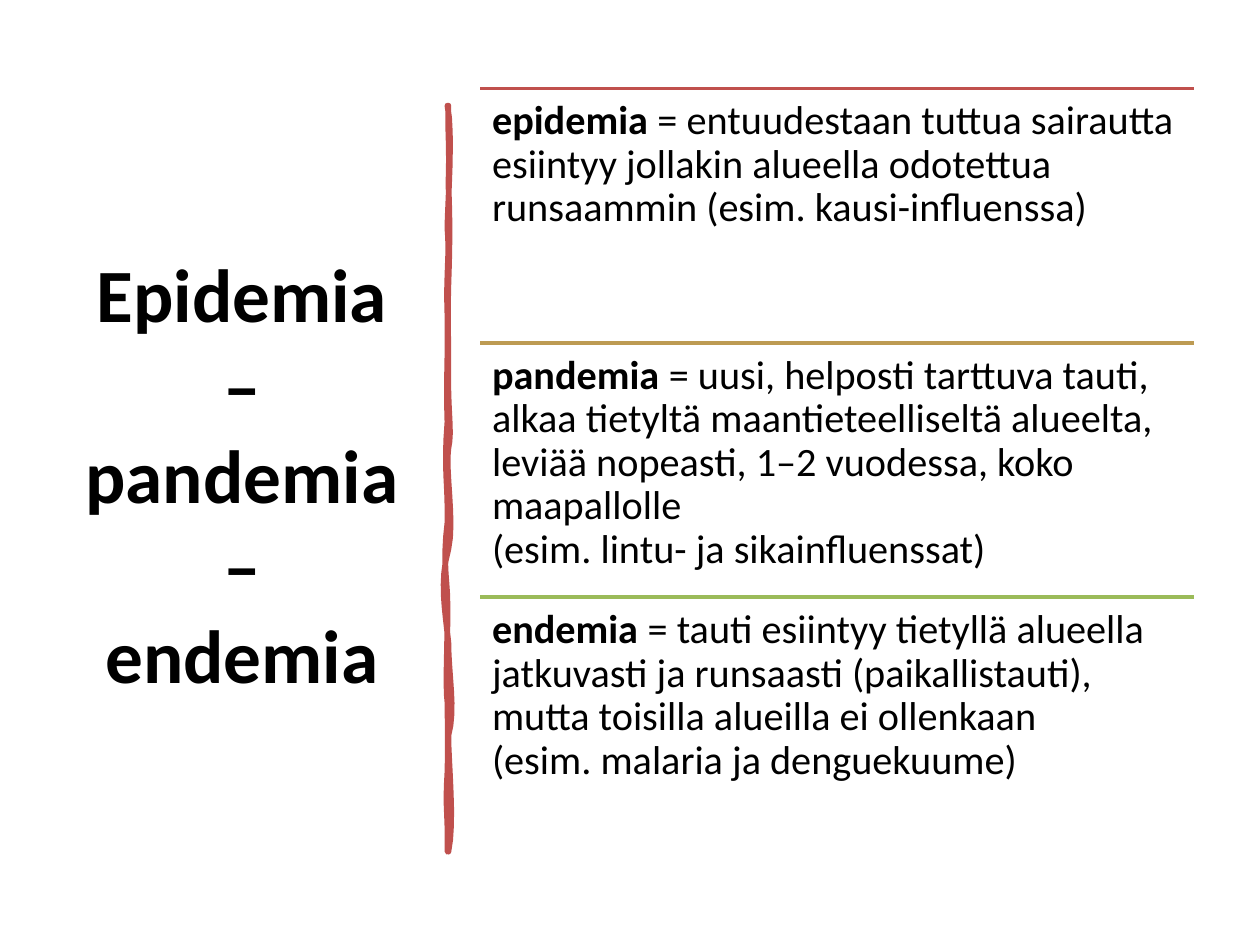
from dataclasses import dataclass

from lxml.etree import SubElement
from pptx import Presentation
from pptx.dml.color import RGBColor
from pptx.enum.shapes import MSO_CONNECTOR
from pptx.enum.text import MSO_ANCHOR, MSO_AUTO_SIZE, PP_ALIGN
from pptx.oxml.ns import qn
from pptx.util import Cm, Pt


@dataclass(frozen=True)
class Theme:
    font: str = "Calibri"
    ink: str = "000000"
    red: str = "C0504D"
    gold: str = "BD9B53"
    green: str = "9BBB59"
    title: float = 43
    body: float = 23
    rule: float = 2
    brush: float = 3.25


# Brush stroke in cm: start point, then two controls and an end per curve.
START = (9.04, 2.13)
CURVES = [
    # right edge, downwards
    (9.02, 2.62, 9.07, 2.95, 9.04, 3.71), (9.07, 4.42, 9.07, 4.85, 9.04, 5.74),
    (9.02, 6.55, 9.04, 6.65, 9.04, 7.47), (9.02, 8.26, 9.12, 8.69, 9.04, 9.04),
    (8.97, 9.45, 9.17, 10.52, 9.04, 11.07), (8.86, 11.73, 8.97, 12.27, 9.04, 12.95),
    (9.04, 13.59, 9.19, 14.3, 9.04, 14.83), (9.04, 15.39, 9.17, 16.59, 9.04, 17.17),
    (9.04, 17.15, 9.02, 17.17, 9.02, 17.17),
    # left edge, upwards
    (9.04, 16.38, 8.97, 16.36, 9.02, 15.57), (9.04, 14.81, 9.02, 14.48, 9.02, 14.15),
    (8.97, 13.87, 9.04, 12.55, 9.02, 12.12), (9.02, 11.73, 8.92, 11.35, 9.02, 10.54),
    (9.04, 9.8, 8.94, 9.47, 9.02, 8.51), (8.99, 7.62, 9.04, 7.09, 9.02, 6.35),
    (8.99, 5.49, 9.07, 5.16, 9.02, 4.6), (9.02, 4.19, 9.14, 2.64, 9.02, 2.13),
]


def trace(start, curves, steps=8):
    """Return points along a chain of cubic curves."""
    points = []
    for ax, ay, bx, by, cx, cy in curves:
        x, y = start
        for i in range(1, steps + 1):
            t = i / steps
            u = 1 - t
            w = (u**3, 3 * u * u * t, 3 * u * t * t, t**3)
            points.append((
                Cm(w[0] * x + w[1] * ax + w[2] * bx + w[3] * cx),
                Cm(w[0] * y + w[1] * ay + w[2] * by + w[3] * cy),
            ))
        start = (cx, cy)
    return points


def write(par, text, *, font, size, color, bold=False):
    """Add text to a paragraph; a newline becomes a line break."""
    for i, part in enumerate(text.split("\n")):
        if i:
            par.add_line_break()
        run = par.add_run()
        run.text = part
        run.font.name = font
        run.font.size = Pt(size)
        run.font.bold = bold
        run.font.color.rgb = RGBColor.from_string(color)


class Deck:
    """Holds the theme and the current slide."""

    def __init__(self, theme):
        self.theme = theme
        self.file = Presentation()
        self.file.slide_width, self.file.slide_height = Cm(25.4), Cm(19.05)
        self.slide = self.file.slides.add_slide(self.file.slide_layouts[5])
        self.look = {"font": theme.font, "color": theme.ink}

    def title(self, text, x, y, w, h):
        box = self.slide.shapes.title
        box.left, box.top, box.width, box.height = Cm(x), Cm(y), Cm(w), Cm(h)
        frame = box.text_frame
        frame.word_wrap = True
        frame.auto_size = MSO_AUTO_SIZE.NONE
        frame.vertical_anchor = MSO_ANCHOR.MIDDLE
        par = frame.paragraphs[0]
        par.alignment = PP_ALIGN.CENTER
        write(par, text, size=self.theme.title, bold=True, **self.look)

    def brush(self, color):
        points = trace(START, CURVES)
        outline = self.slide.shapes.build_freeform(Cm(START[0]), Cm(START[1]))
        outline.add_line_segments(points, close=True)
        shape = outline.convert_to_shape()
        shape.shadow.inherit = False
        shape.fill.solid()
        shape.fill.fore_color.rgb = RGBColor.from_string(color)
        shape.line.color.rgb = RGBColor.from_string(color)
        shape.line.width = Pt(self.theme.brush)

    def rule(self, x, y, w, color):
        line = self.slide.shapes.add_connector(
            MSO_CONNECTOR.STRAIGHT, Cm(x), Cm(y), Cm(x + w), Cm(y))
        line.line.color.rgb = RGBColor.from_string(color)
        line.line.width = Pt(self.theme.rule)
        SubElement(line._element.spPr, qn("a:effectLst"))

    def entry(self, term, text, x, y, w, h):
        box = self.slide.shapes.add_textbox(Cm(x), Cm(y), Cm(w), Cm(h))
        frame = box.text_frame
        frame.word_wrap = True
        frame.margin_left = frame.margin_right = Cm(0.24)
        frame.margin_top = frame.margin_bottom = Cm(0.24)
        par = frame.paragraphs[0]
        par.line_spacing = 0.9
        write(par, term, size=self.theme.body, bold=True, **self.look)
        write(par, text, size=self.theme.body, **self.look)


def main():
    theme = Theme()
    deck = Deck(theme)
    deck.title("Epidemia – pandemia – endemia", 1.32, 1.78, 7.11, 15.52)
    deck.brush(theme.red)

    terms = [
        ("epidemia", theme.red,
         " = entuudestaan tuttua sairautta esiintyy jollakin alueella "
         "odotettua runsaammin (esim. kausi-influenssa)"),
        ("pandemia", theme.gold,
         " = uusi, helposti tarttuva tauti, alkaa tietyltä maantieteelliseltä "
         "alueelta, leviää nopeasti, 1–2 vuodessa, koko maapallolle \n"
         "(esim. lintu- ja sikainfluenssat)"),
        ("endemia", theme.green,
         " = tauti esiintyy tietyllä alueella jatkuvasti ja runsaasti "
         "(paikallistauti), mutta toisilla alueilla ei ollenkaan \n"
         "(esim. malaria ja denguekuume)"),
    ]
    left, top, width, step = 9.68, 1.78, 14.38, 5.13
    for i, (term, color, text) in enumerate(terms):
        y = top + i * step
        deck.rule(left, y, width, color)
        deck.entry(term, text, left, y, width, step)

    deck.file.save("out.pptx")


if __name__ == "__main__":
    main()
